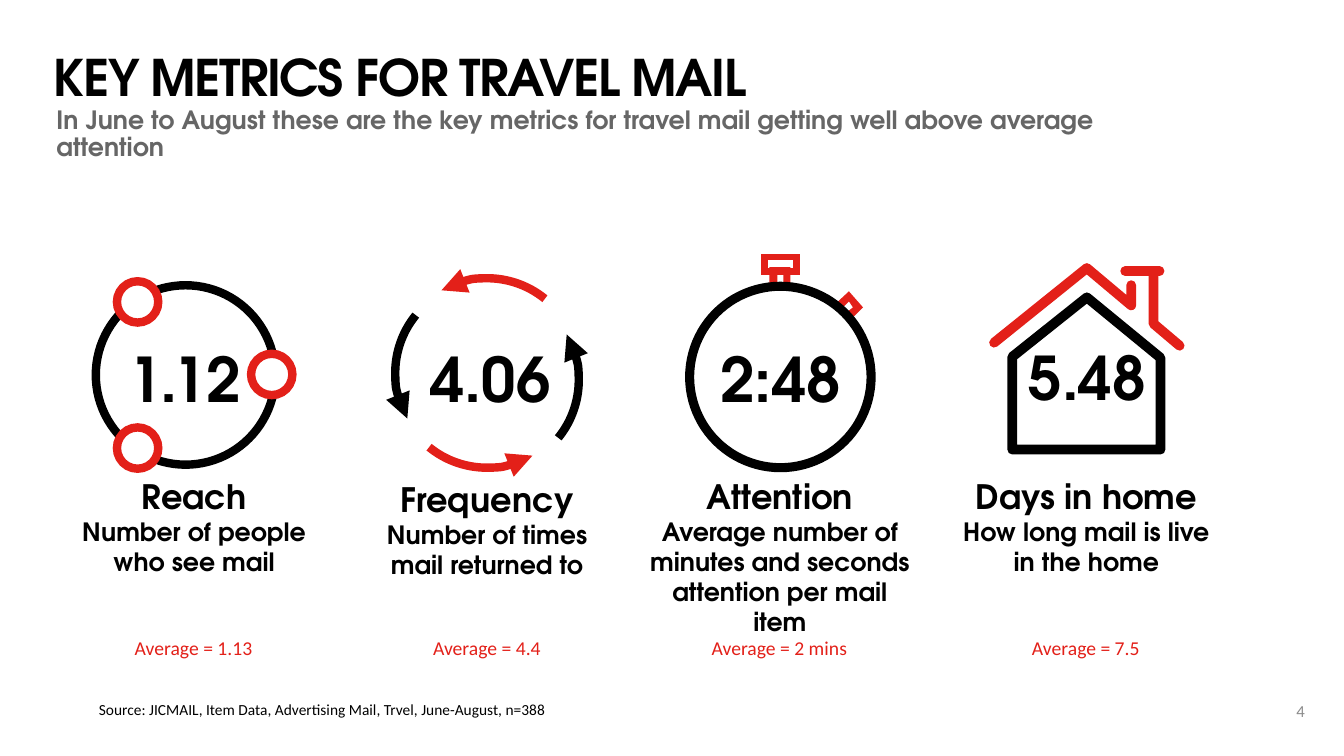
import pptx
import pptx.util
import pptx.dml.color
import pptx.enum.shapes
import pptx.enum.text
import pptx.oxml.ns
from lxml import etree

PX = 9144
RED, BLACK, WHITE, GREY = "E32019", "000000", "FFFFFF", "666666"
HEAD, BODY = "TeX Gyre Adventor", "Calibri"
KIND = pptx.enum.shapes.MSO_SHAPE
ALIGN = pptx.enum.text.PP_ALIGN
ANCHOR = pptx.enum.text.MSO_ANCHOR
qn = pptx.oxml.ns.qn


def emu(*vals):
    return [pptx.util.Emu(v * PX) for v in vals]


def tint(code):
    return pptx.dml.color.RGBColor.from_string(code)


def place(item, box):
    item.left, item.top, item.width, item.height = emu(*box)
    return item


def text(item, lines, sizes, font=HEAD, color=BLACK, bold=True, align=ALIGN.CENTER,
         anchor=ANCHOR.TOP, wrap=True, pad=(10, 5), space=None, track=None, plain=False):
    frame = item.text_frame
    frame.auto_size = pptx.enum.text.MSO_AUTO_SIZE.NONE
    frame.word_wrap = wrap
    frame.vertical_anchor = anchor
    frame.margin_left, frame.margin_top = emu(*pad)
    frame.margin_right, frame.margin_bottom = emu(*pad)
    for num, (line, size) in enumerate(zip(lines, sizes)):
        para = frame.add_paragraph() if num else frame.paragraphs[0]
        para.alignment = align
        para.space_before = pptx.util.Pt(0)
        if space:
            para.line_spacing = space
        if plain:
            props = para._p.get_or_add_pPr()
            props.set("marL", "0")
            props.set("indent", "0")
            etree.SubElement(props, qn("a:buNone"))
        run = para.add_run()
        run.text = line
        run.font.name, run.font.size = font, pptx.util.Pt(size)
        run.font.bold = bold
        run.font.color.rgb = tint(color)
        if track:
            run._r.get_or_add_rPr().set("spc", str(track))


def label(slide, box, lines, sizes, **style):
    text(slide.shapes.add_textbox(*emu(*box)), lines, sizes, **style)


def ink(item, color, width, fill=None, end=None, cap=None):
    if hasattr(item, "fill"):
        item.shadow.inherit = False
        if fill:
            item.fill.solid()
            item.fill.fore_color.rgb = tint(fill)
        else:
            item.fill.background()
    if not width:
        item.line.fill.background()
        return
    item.line.color.rgb = tint(color)
    item.line.width = pptx.util.Pt(width)
    line = item._element.spPr.find(qn("a:ln"))
    if cap:
        line.set("cap", cap)
        etree.SubElement(line, qn("a:round"))
    else:
        etree.SubElement(line, qn("a:miter")).set("lim", "800000")
    if end:
        etree.SubElement(line, qn("a:tailEnd")).set("type", end)
    if not hasattr(item, "fill"):
        etree.SubElement(item._element.spPr, qn("a:effectLst"))


def shape(slide, kind, box, color, width, **style):
    item = slide.shapes.add_shape(kind, *emu(*box))
    ink(item, color, width, **style)
    return item


def trace(slide, x, y, dots, color, width=0, close=False, **style):
    dots = [(x + a, y + b) for a, b in dots]
    path = slide.shapes.build_freeform(*dots[0], scale=PX)
    path.add_line_segments(dots[1:], close=close)
    ink(path.convert_to_shape(), color, width, **style)


def reach(slide, x, y):
    shape(slide, KIND.OVAL, (x, y, 178, 178), BLACK, 6)
    for a, b in [(21, -4), (21, 141), (154, 68)]:
        shape(slide, KIND.OVAL, (x + a, y + b, 41, 41), RED, 6, fill=WHITE)


def cycle(slide, x, y):
    for num, drop in enumerate((0, 3, 6, 10)):
        color = BLACK if num % 2 else RED
        arc = shape(slide, KIND.ARC, (x, y + drop, 182, 182), color, 6, end="triangle")
        arc.adjustments[0], arc.adjustments[1] = 137.94, 179.25
        arc.rotation = (179 - 90 * num) % 360
        arc._element.spPr.find(qn("a:xfrm")).set("flipV", "1")


def watch(slide, x, y):
    knob = [(163, 66), (157, 60), (165, 54), (161, 48),
            (153, 56), (147, 51), (161, 38), (175, 54)]
    stem = [(82, 32), (82, 14), (103, 14), (103, 32),
            (96, 32), (96, 21), (90, 21), (90, 32)]
    for dots in (knob, stem):
        trace(slide, x, y, dots, RED, close=True, fill=RED)
    shape(slide, KIND.RECTANGLE, (x + 77, y + 4, 32, 14), RED, 5)
    shape(slide, KIND.OVAL, (x + 3, y + 33, 180, 180), BLACK, 6.5)


def home(slide, x, y):
    wall = [(24, 93), (24, 185), (171, 185), (171, 94), (98, 34)]
    roof = [(6, 79), (98, 5), (142, 42), (142, 22)]
    stack = [(164, 8), (164, 60), (190, 82)]
    trace(slide, x, y, wall, BLACK, 7, close=True, cap="rnd")
    for dots in (roof, stack):
        trace(slide, x, y, dots, RED, 7, cap="rnd")
    top = slide.shapes.add_connector(
        pptx.enum.shapes.MSO_CONNECTOR.STRAIGHT,
        *emu(x + 136, y + 8, x + 170, y + 8))
    ink(top, RED, 7, cap="rnd")


def metric(slide, x, y, wide, icon, spot, shift, count, size, name, note, mean, drop=0):
    icon(slide, *spot)
    mid = x + wide // 2
    label(slide, (mid + shift - 70, y, 141, 84), [count], [size], wrap=False)
    label(slide, (x, y + 134 + drop, wide, 172), [name, note], [24, 18])
    label(slide, (mid - 78, y + 293, 156, 34), ["Average = " + mean], [14],
          font=BODY, color=RED, bold=False, wrap=False)


def header(slide, x, y):
    title, sub = slide.placeholders[0], slide.placeholders[1]
    text(place(title, (x, y, 1101, 52)), ["KEY METRICS FOR TRAVEL MAIL"], [36],
         align=ALIGN.LEFT, pad=(0, 0), space=pptx.util.Pt(44), track=-100)
    text(place(sub, (x + 3, y + 62, 1098, 31)),
         ["In June to August these are the key metrics for travel mail "
          "getting well above average attention"], [18],
         color=GREY, align=ALIGN.LEFT, pad=(0, 0), space=0.9, plain=True)


def footer(slide, x, y):
    text(place(slide.placeholders[2], (x, y, 570, 15)),
         ["Source: JICMAIL, Item Data, Advertising Mail, Trvel, June-August, n=388"],
         [11], font=BODY, bold=False, align=ALIGN.LEFT, pad=(10, 0), space=0.9, plain=True)
    label(slide, (x + 1175, y - 12, 41, 40), ["4"], [12], font=BODY, color="8C8C8C",
          bold=False, align=ALIGN.RIGHT, anchor=ANCHOR.MIDDLE)


def main():
    deck = pptx.Presentation()
    deck.slide_width, deck.slide_height = emu(1333, 750)
    slide = deck.slides.add_slide(deck.slide_layouts[3])
    header(slide, 53, 45)
    metric(slide, 51, 333, 283, reach, (95, 283), -9, "1.12", 44,
           "Reach", "Number of people who see mail", "1.13")
    metric(slide, 354, 333, 258, cycle, (392, 276), 3, "4.06", 44,
           "Frequency", "Number of times mail returned to", "4.4", drop=3)
    metric(slide, 632, 333, 283, watch, (681, 251), 1, "2:48", 44,
           "Attention", "Average number of minutes and seconds attention per mail item",
           "2 mins")
    metric(slide, 936, 333, 283, home, (980, 261), 1, "5.48", 43,
           "Days in home", "How long mail is live in the home", "7.5")
    footer(slide, 88, 697)
    deck.save("out.pptx")


if __name__ == "__main__":
    main()
